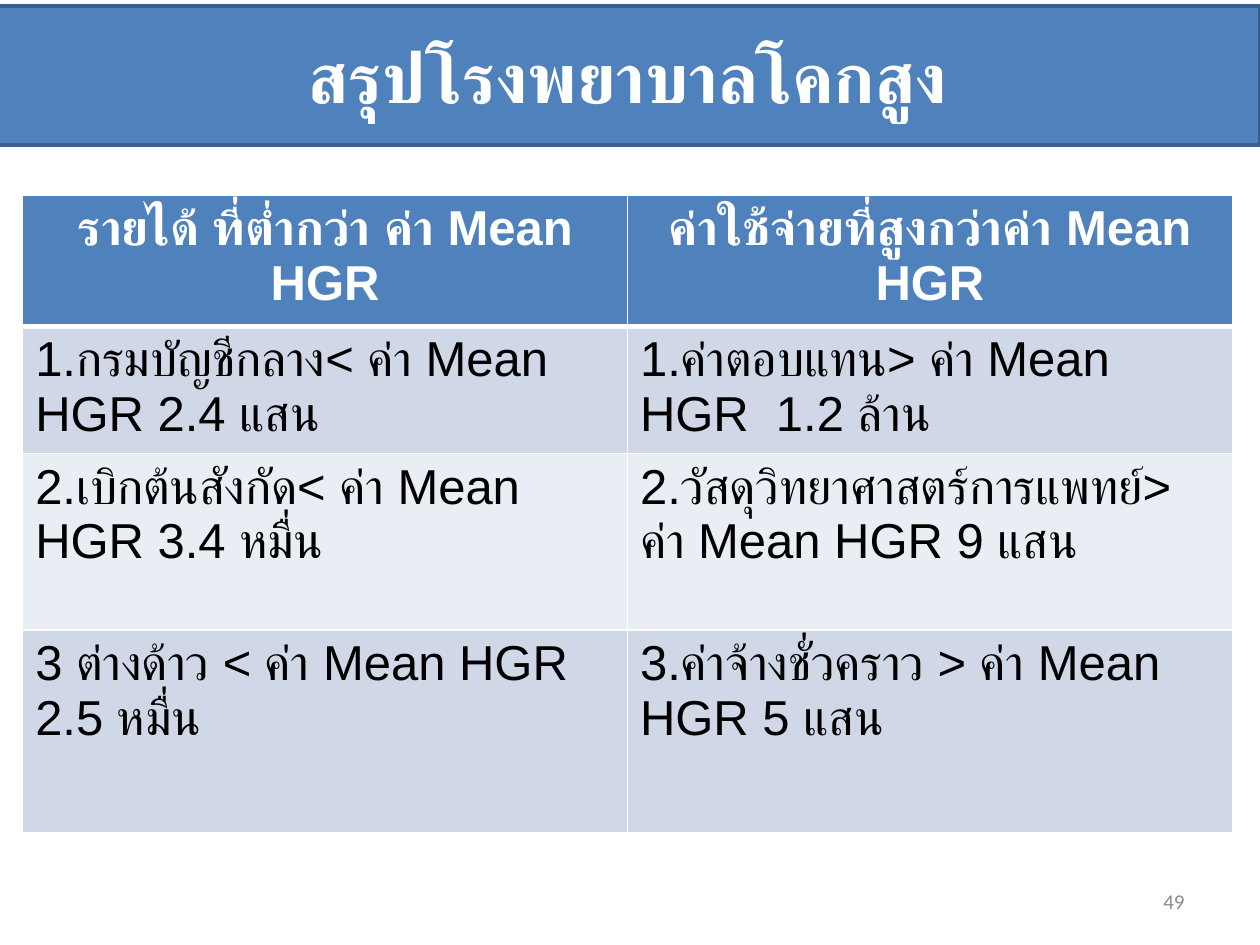
import dataclasses

import lxml.etree
import pptx
import pptx.dml.color
import pptx.enum.shapes
import pptx.enum.text
import pptx.oxml.ns
import pptx.util

Inches = pptx.util.Inches
ALIGN = pptx.enum.text.PP_ALIGN
MIDDLE = pptx.enum.text.MSO_ANCHOR.MIDDLE


@dataclasses.dataclass(frozen=True)
class Theme:
    blue: str = "4F81BD"
    outline: str = "3A5F8C"
    bands: tuple = ("D0D8E8", "E9EDF4")
    white: str = "FFFFFF"
    black: str = "000000"
    gray: str = "8C8C8C"
    font: str = "Arial"
    number_font: str = "Calibri"
    title_size: int = 40
    table_size: int = 28
    number_size: int = 12


THEME = Theme()
ROWS = [
    ("รายได้ ที่ต่ำกว่า ค่า Mean HGR", "ค่าใช้จ่ายที่สูงกว่าค่า Mean HGR"),
    ("1.กรมบัญชีกลาง< ค่า Mean HGR 2.4 แสน", "1.ค่าตอบแทน> ค่า Mean HGR  1.2 ล้าน"),
    ("2.เบิกต้นสังกัด< ค่า Mean HGR 3.4 หมื่น", "2.วัสดุวิทยาศาสตร์การแพทย์> ค่า Mean HGR 9 แสน"),
    ("3 ต่างด้าว < ค่า Mean HGR 2.5 หมื่น", "3.ค่าจ้างชั่วคราว > ค่า Mean HGR 5 แสน"),
]
ROW_HEIGHTS = (1.04, 1.01, 1.4, 1.61)


def rgb(color):
    return pptx.dml.color.RGBColor.from_string(color)


def set_text(tf, text, size, color, font=THEME.font, bold=False, align=ALIGN.LEFT):
    tf.text = text
    tf.word_wrap = True
    p = tf.paragraphs[0]
    p.alignment = align
    r = p.runs[0]
    r.font.size = pptx.util.Pt(size)
    r.font.bold = bold
    r.font.name = font
    r.font.color.rgb = rgb(color)
    cs = lxml.etree.SubElement(r.font._element, pptx.oxml.ns.qn("a:cs"))
    cs.set("typeface", font)


def set_border(cell, side, width):
    qn = pptx.oxml.ns.qn
    ln = lxml.etree.Element(qn(f"a:ln{side}"), w=str(pptx.util.Pt(width)))
    fill = lxml.etree.SubElement(ln, qn("a:solidFill"))
    lxml.etree.SubElement(fill, qn("a:srgbClr"), val=THEME.white)
    cell._tc.get_or_add_tcPr().append(ln)


def add_banner(s, text):
    sp = s.shapes.add_shape(
        pptx.enum.shapes.MSO_SHAPE.RECTANGLE,
        Inches(-0.04), Inches(0.05), Inches(10.04), Inches(1.1))
    sp.shadow.inherit = False
    sp.fill.solid()
    sp.fill.fore_color.rgb = rgb(THEME.blue)
    sp.line.color.rgb = rgb(THEME.outline)
    sp.line.width = pptx.util.Pt(2)
    sp.text_frame.vertical_anchor = MIDDLE
    set_text(sp.text_frame, text, THEME.title_size, THEME.white,
             bold=True, align=ALIGN.CENTER)


def fill_cell(cell, text, row):
    header = row == 0
    for side in "LRTB":
        thick = (header and side == "B") or (row == 1 and side == "T")
        set_border(cell, side, 3 if thick else 1)
    cell.fill.solid()
    cell.fill.fore_color.rgb = rgb(THEME.blue if header else THEME.bands[(row - 1) % 2])
    set_text(cell.text_frame, text, THEME.table_size,
             THEME.white if header else THEME.black, bold=header,
             align=ALIGN.CENTER if header else ALIGN.LEFT)


def add_summary_table(s):
    table = s.shapes.add_table(
        len(ROWS), 2, Inches(0.18), Inches(1.55),
        Inches(9.6), Inches(sum(ROW_HEIGHTS))).table
    for row, (texts, height) in enumerate(zip(ROWS, ROW_HEIGHTS)):
        table.rows[row].height = Inches(height)
        for col, text in enumerate(texts):
            fill_cell(table.cell(row, col), text, row)


def add_slide_number(s, number):
    sp = s.shapes.add_textbox(Inches(7.17), Inches(6.95), Inches(2.33), Inches(0.4))
    sp.text_frame.vertical_anchor = MIDDLE
    set_text(sp.text_frame, number, THEME.number_size, THEME.gray,
             font=THEME.number_font, align=ALIGN.RIGHT)


def main():
    prs = pptx.Presentation()
    prs.slide_width, prs.slide_height = Inches(10), Inches(7.5)
    s = prs.slides.add_slide(prs.slide_layouts[6])
    add_summary_table(s)
    add_banner(s, "สรุปโรงพยาบาลโคกสูง")
    add_slide_number(s, "49")
    prs.save("out.pptx")


if __name__ == "__main__":
    main()
